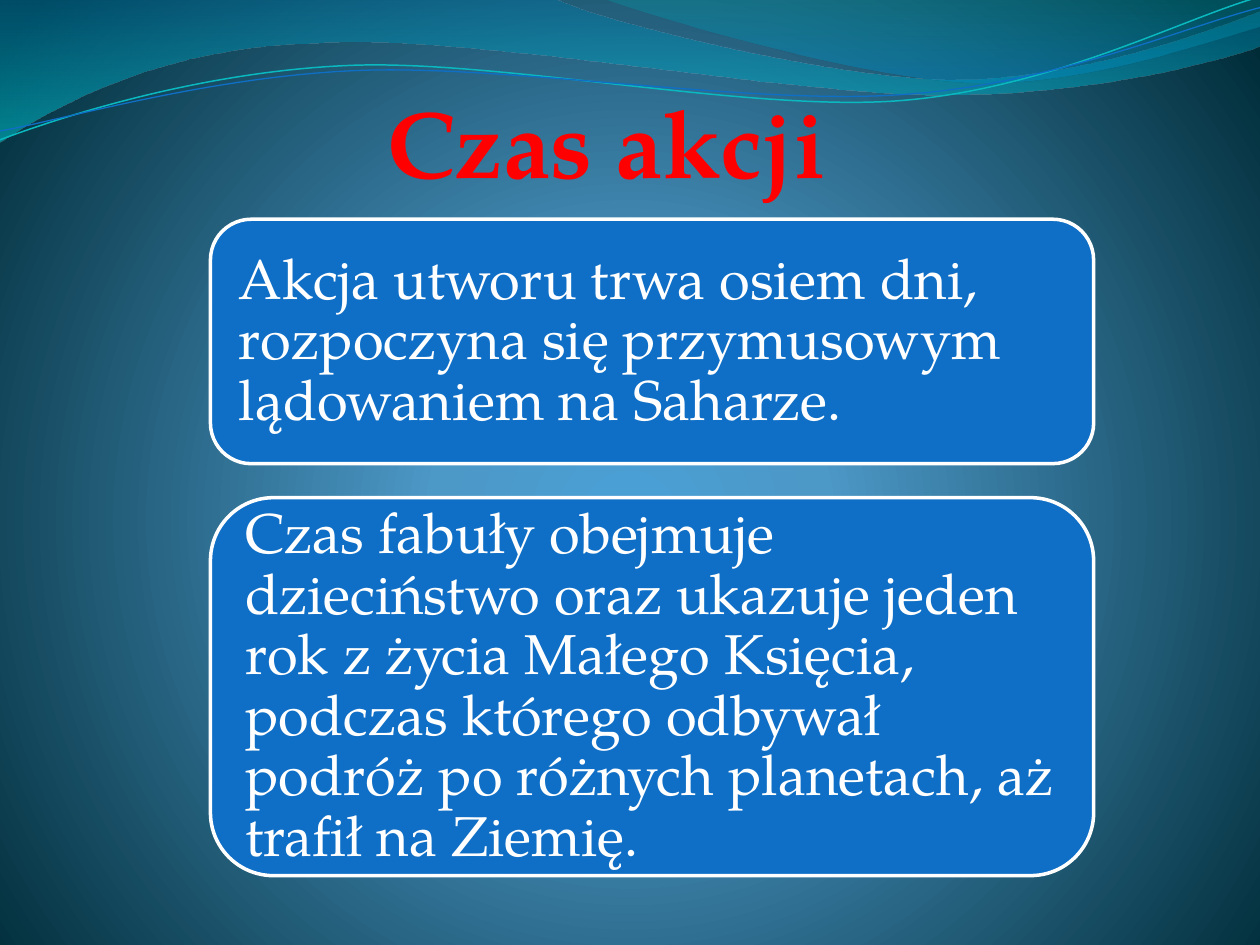
from dataclasses import dataclass
from math import cos, radians, sin
from typing import Optional

from lxml.etree import SubElement
from pptx import Presentation
from pptx.dml.color import RGBColor
from pptx.enum.shapes import MSO_SHAPE as Shape
from pptx.enum.text import MSO_ANCHOR as Anchor, MSO_AUTO_SIZE as AutoSize, PP_ALIGN as Align
from pptx.oxml.ns import qn
from pptx.util import Inches, Pt

FONT = "TeX Gyre Pagella"
BLUE, WHITE, RED = "0F6FC6", "FFFFFF", "FF0000"


@dataclass
class Stop:
    position: int
    color: str
    opacity: int = 100


@dataclass
class Wave:
    box: tuple
    start: tuple
    segments: list
    stops: Optional[list] = None
    line_color: str = ""
    line_width: float = 0
    rotation: float = 0


@dataclass
class Card:
    top: float
    height: float
    text: str


BACKGROUND = [Stop(0, "4AA0D6"), Stop(25, "4C98C7"), Stop(100, "002C38")]

WAVES = [
    Wave((-0.01, -0.01, 10.02, 1.14), (0, 0), [
        [(4.4, -0.01)],
        [(4.76, 0.17), (6.64, 0.63), (7.58, 0.63)],
        [(8.53, 0.63), (9.58, 0.26), (10, 0.09)],
        [(10.01, 0.36)],
        [(9.83, 0.44), (8.7, 0.76), (7.46, 0.75)],
        [(6.22, 0.75), (3.82, 0.28), (2.57, 0.34)],
        [(1.29, 0.36), (0.46, 0.83), (-0.01, 1.13)],
        [(0, 0)],
    ], stops=[Stop(0, "0074A1", 45), Stop(100, "00C6CF", 55)]),
    Wave((4.79, -0.01, 5.21, 0.7), (4.79, -0.01), [
        [(5.09, 0.11), (6.82, 0.62), (7.69, 0.65)],
        [(8.56, 0.69), (9.61, 0.32), (10, 0.21)],
        [(10, 0)],
        [(4.79, -0.01)],
    ], stops=[Stop(0, "00A1A9", 30), Stop(80, "008BBF", 45)]),
    Wave((-0.02, 0.22, 10.02, 0.71), (0, 1.11), [
        [(0.48, 0.93), (1.58, 0.57), (2.77, 0.52)],
        [(3.95, 0.47), (5.93, 0.89), (7.13, 0.8)],
        [(8.33, 0.71), (9.38, 0.15), (9.98, -0.02)],
    ], line_color="0AB8BF", line_width=0.85, rotation=357.3),
    Wave((-0.02, 0.3, 10.03, 0.58), (0, 1.04), [
        [(0.47, 0.96), (1.64, 0.61), (2.83, 0.56)],
        [(4.03, 0.51), (5.97, 0.84), (7.17, 0.75)],
        [(8.36, 0.67), (9.41, 0.21), (10, 0.06)],
    ], line_color=BLUE, line_width=0.75, rotation=357.3),
]

CARDS = [
    Card(1.74, 1.94, "Akcja utworu trwa osiem dni, rozpoczyna się przymusowym "
                     "lądowaniem na Saharze."),
    Card(3.95, 3, "Czas fabuły obejmuje dzieciństwo oraz ukazuje jeden rok z życia "
                  "Małego Księcia, podczas którego odbywał podróż po różnych "
                  "planetach, aż trafił na Ziemię."),
]


def rgb(color: str) -> RGBColor:
    return RGBColor.from_string(color)


def set_gradient(element, stops: list, radial: bool = False) -> None:
    gradient = element.find(".//" + qn("a:gradFill"))
    for child in list(gradient):
        gradient.remove(child)
    stop_list = SubElement(gradient, qn("a:gsLst"))
    for stop in stops:
        mark = SubElement(stop_list, qn("a:gs"), pos=str(stop.position * 1000))
        color = SubElement(mark, qn("a:srgbClr"), val=stop.color)
        if stop.opacity < 100:
            SubElement(color, qn("a:alpha"), val=str(stop.opacity * 1000))
    if radial:
        circle = SubElement(gradient, qn("a:path"), {"path": "circle"})
        SubElement(circle, qn("a:fillToRect"), l="10000", t="110000", r="10000", b="100000")
    else:
        SubElement(gradient, qn("a:lin"), ang="5400000", scaled="0")


def local_point(wave: Wave, point: tuple) -> tuple:
    left, top, width, height = wave.box
    angle = radians(-wave.rotation)
    dx = point[0] - left - width / 2
    dy = point[1] - top - height / 2
    return (Inches(width / 2 + dx * cos(angle) - dy * sin(angle)),
            Inches(height / 2 + dx * sin(angle) + dy * cos(angle)))


def add_step(outline, tag: str, wave: Wave, points: list) -> None:
    step = SubElement(outline, qn(tag))
    for point in points:
        x, y = local_point(wave, point)
        SubElement(step, qn("a:pt"), x=str(x), y=str(y))


def set_curves(ribbon, wave: Wave) -> None:
    ribbon.left, ribbon.top, ribbon.width, ribbon.height = map(Inches, wave.box)
    ribbon.rotation = wave.rotation
    outline = ribbon.element.find(".//" + qn("a:pathLst")).find(qn("a:path"))
    for child in list(outline):
        outline.remove(child)
    outline.set("w", str(ribbon.width))
    outline.set("h", str(ribbon.height))
    add_step(outline, "a:moveTo", wave, [wave.start])
    for points in wave.segments:
        add_step(outline, "a:lnTo" if len(points) == 1 else "a:cubicBezTo", wave, points)
    if wave.stops:
        SubElement(outline, qn("a:close"))


def draw_wave(slide, wave: Wave) -> None:
    builder = slide.shapes.build_freeform(*map(Inches, wave.start))
    builder.add_line_segments([tuple(map(Inches, points[-1])) for points in wave.segments],
                              close=False)
    ribbon = builder.convert_to_shape()
    set_curves(ribbon, wave)
    ribbon.shadow.inherit = False
    if wave.stops:
        ribbon.fill.gradient()
        set_gradient(ribbon.element, wave.stops)
        ribbon.line.fill.background()
    else:
        ribbon.fill.background()
        ribbon.line.color.rgb = rgb(wave.line_color)
        ribbon.line.width = Pt(wave.line_width)


def format_text(paragraph, size: float, color: str, bold: bool, align) -> None:
    paragraph.alignment = align
    for run in paragraph.runs:
        run.font.name = FONT
        run.font.size = Pt(size)
        run.font.bold = bold
        run.font.color.rgb = rgb(color)


def draw_title(slide, text: str) -> None:
    title = slide.shapes.title
    title.left, title.top = Inches(2.97), Inches(0.62)
    title.width, title.height = Inches(3.69), Inches(1.01)
    frame = title.text_frame
    frame.text = text
    frame.word_wrap = False
    frame.auto_size = AutoSize.SHAPE_TO_FIT_TEXT
    frame.vertical_anchor = Anchor.TOP
    format_text(frame.paragraphs[0], 54, RED, True, Align.CENTER)
    title.element.getparent().append(title.element)


def draw_card(slide, card: Card) -> None:
    box = slide.shapes.add_shape(Shape.ROUNDED_RECTANGLE, Inches(1.67), Inches(card.top),
                                 Inches(7.01), Inches(card.height))
    box.shadow.inherit = False
    box.fill.solid()
    box.fill.fore_color.rgb = rgb(BLUE)
    box.line.color.rgb = rgb(WHITE)
    box.line.width = Pt(2)
    frame = box.text_frame
    frame.text = card.text
    frame.word_wrap = True
    frame.vertical_anchor = Anchor.MIDDLE
    frame.margin_left = frame.margin_right = Inches(0.13)
    frame.margin_top = frame.margin_bottom = Inches(0.13)
    paragraph = frame.paragraphs[0]
    paragraph.line_spacing = 0.9
    format_text(paragraph, 32, WHITE, False, Align.LEFT)


def main() -> None:
    deck = Presentation()
    deck.slide_width, deck.slide_height = Inches(10), Inches(7.5)
    slide = deck.slides.add_slide(deck.slide_layouts[5])
    slide.background.fill.gradient()
    set_gradient(slide.element, BACKGROUND, radial=True)
    for wave in WAVES:
        draw_wave(slide, wave)
    draw_title(slide, "Czas akcji")
    for card in CARDS:
        draw_card(slide, card)
    deck.save("out.pptx")


if __name__ == "__main__":
    main()
